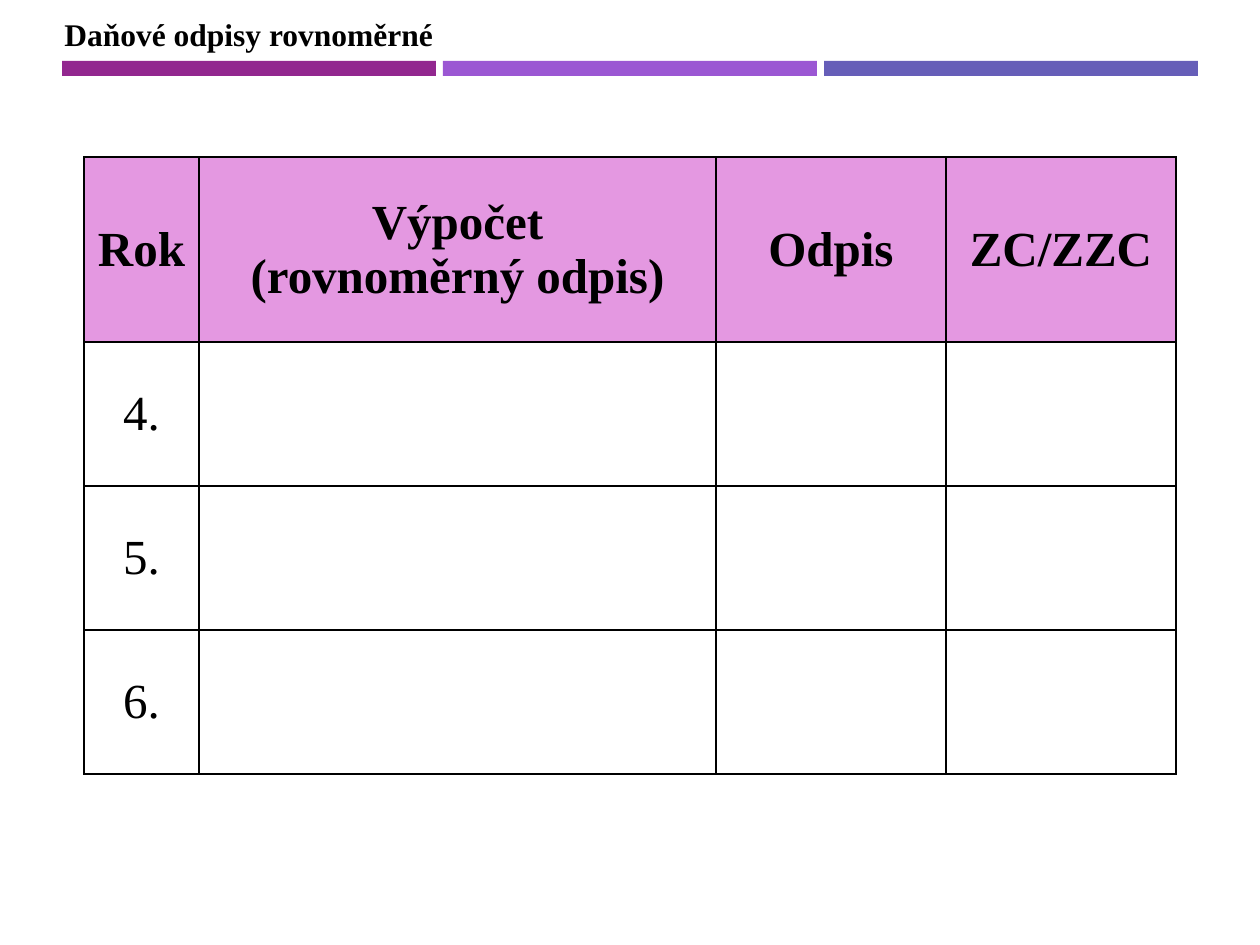
from dataclasses import dataclass
from lxml.etree import SubElement
from pptx import Presentation
from pptx.dml.color import RGBColor
from pptx.enum.shapes import MSO_SHAPE as Preset
from pptx.enum.text import MSO_ANCHOR as Anchor, PP_ALIGN as Align
from pptx.oxml.ns import qn
from pptx.util import Pt

EMU_PER_PX = 914400 / 126


@dataclass(frozen=True)
class Theme:
    font: str = "Times New Roman"
    text: str = "000000"
    border: str = "000000"
    header: str = "E498E1"
    bars: tuple = ("92278F", "9B57D3", "665EB8")
    title_size: int = 18
    table_size: int = 28


THEME = Theme()
HEADINGS = ("Rok", "Výpočet\n(rovnoměrný odpis)", "Odpis", "ZC/ZZC")
YEARS = ("4.", "5.", "6.")
COLUMN_WIDTHS = (115, 517, 230, 230)
ROW_HEIGHTS = (185, 144, 144, 144)


def px(*lengths):
    return [round(length * EMU_PER_PX) for length in lengths]


def write_text(frame, text, size, bold=False, align=Align.LEFT):
    frame.text = text
    for paragraph in frame.paragraphs:
        paragraph.alignment = align
        for run in paragraph.runs:
            run.font.name = THEME.font
            run.font.size = Pt(size)
            run.font.bold = bold
            run.font.color.rgb = RGBColor.from_string(THEME.text)


def add_bars(slide, left, top, width, height, gap):
    for index, color in enumerate(THEME.bars):
        bar_left = left + index * (width + gap)
        shape = slide.shapes.add_shape(Preset.RECTANGLE, *px(bar_left, top, width, height))
        shape.shadow.inherit = False
        shape.fill.solid()
        shape.fill.fore_color.rgb = RGBColor.from_string(color)
        shape.line.fill.background()


def add_title(slide, text, left, top, width, height):
    frame = slide.shapes.add_textbox(*px(left, top, width, height)).text_frame
    frame.word_wrap = False
    write_text(frame, text, THEME.title_size, bold=True)


def add_borders(cell):
    properties = cell._tc.get_or_add_tcPr()
    for index, side in enumerate(("lnL", "lnR", "lnT", "lnB")):
        line = properties.makeelement(qn(f"a:{side}"), {"w": str(Pt(1))})
        fill = SubElement(line, qn("a:solidFill"))
        SubElement(fill, qn("a:srgbClr"), val=THEME.border)
        properties.insert(index, line)


def format_cell(cell, text, is_header):
    cell.vertical_anchor = Anchor.MIDDLE
    cell.margin_left, cell.margin_right, cell.margin_top, cell.margin_bottom = px(9, 9, 0, 0)
    if is_header:
        cell.fill.solid()
        cell.fill.fore_color.rgb = RGBColor.from_string(THEME.header)
    else:
        cell.fill.background()
    add_borders(cell)
    if text:
        write_text(cell.text_frame, text, THEME.table_size, bold=is_header, align=Align.CENTER)


def add_depreciation_table(slide, left, top):
    rows = [HEADINGS] + [(year, "", "", "") for year in YEARS]
    frame = slide.shapes.add_table(
        len(rows), len(HEADINGS), *px(left, top, sum(COLUMN_WIDTHS), sum(ROW_HEIGHTS))
    )
    table = frame.table
    table.horz_banding = False
    for column, width in zip(table.columns, px(*COLUMN_WIDTHS)):
        column.width = width
    for row, height in zip(table.rows, px(*ROW_HEIGHTS)):
        row.height = height
    for row_index, texts in enumerate(rows):
        for column_index, text in enumerate(texts):
            format_cell(table.cell(row_index, column_index), text, row_index == 0)


def main():
    presentation = Presentation()
    presentation.slide_width, presentation.slide_height = px(1260, 945)
    slide = presentation.slides.add_slide(presentation.slide_layouts[6])
    add_bars(slide, left=62, top=61, width=374, height=15, gap=7)
    add_title(slide, "Daňové odpisy rovnoměrné", left=52, top=9, width=398, height=50)
    add_depreciation_table(slide, left=84, top=157)
    presentation.save("out.pptx")


if __name__ == "__main__":
    main()
